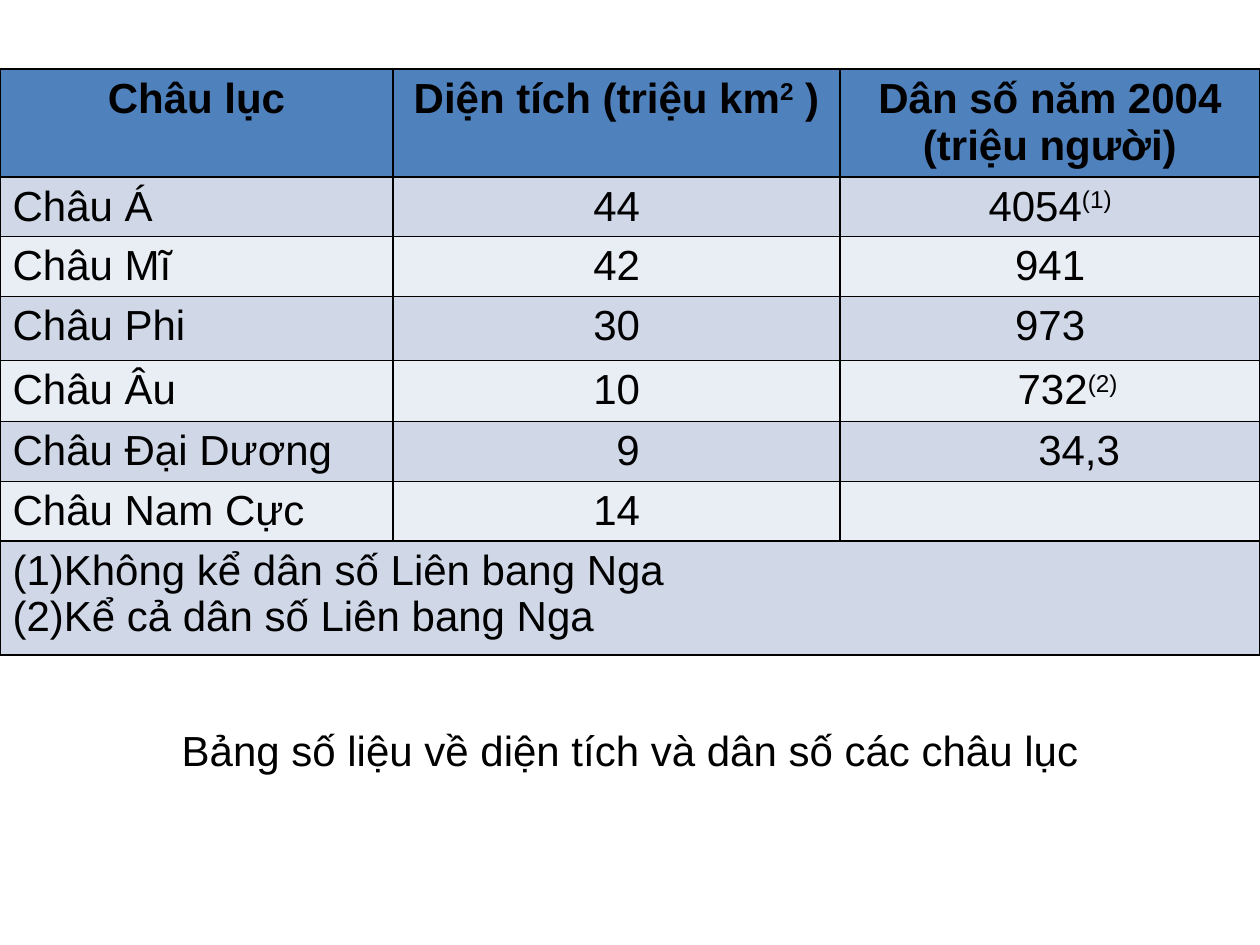
from lxml import etree
from pptx import Presentation
from pptx.dml.color import RGBColor
from pptx.enum.text import MSO_AUTO_SIZE, PP_ALIGN
from pptx.oxml.ns import qn
from pptx.util import Emu, Pt

CENTER, JUSTIFY = PP_ALIGN.CENTER, PP_ALIGN.JUSTIFY
GROW = MSO_AUTO_SIZE.SHAPE_TO_FIT_TEXT

# Content: a cell is a list of (text, is superscript) runs
HEADERS = [
    [("Châu lục", False)],
    [("Diện tích (triệu km", False), ("2", True), (" )", False)],
    [("Dân số năm 2004 (triệu người)", False)],
]
CONTINENTS = [
    ("Châu Á", "44", "4054", "(1)"),
    ("Châu Mĩ", "42", "941", ""),
    ("Châu Phi", "30", "973", ""),
    ("Châu Âu", "10", "732", "(2)"),
    ("Châu Đại Dương", "9", "34,3", ""),
    ("Châu Nam Cực", "14", "", ""),
]
NOTES = ["Không kể dân số Liên bang Nga", "Kể cả dân số Liên bang Nga"]
CAPTION = "Bảng số liệu về diện tích và dân số các châu lục"

# Layout in px, 126 to the inch
SLIDE_W, SLIDE_H = 1260, 945
TABLE_TOP = 69
COLUMN_WIDTHS = [393, 447, 420]
ROW_HEIGHTS = [108, 59, 60, 64, 61, 60, 59, 114]
CAPTION_BOX = (0, 718, SLIDE_W, 63)
CELL_MARGIN = 13
NUMBER_SHIFTS = {"732": 35, "9": 23, "34,3": 58}
NOTE_INDENT = 48

HEADER_FILL = "4F81BD"
BAND_FILLS = ["D0D8E8", "E9EDF4"]
BLACK = "000000"
FONT = {"name": "Arial", "size": Pt(24)}


def px(length):
    return Emu(round(length * 914400 / 126))


def colour(value):
    return RGBColor.from_string(value)


def write(paragraph, runs, align, bold=False):
    paragraph.alignment = align
    for text, superscript in runs:
        run = paragraph.add_run()
        run.text = text
        for key, value in {**FONT, "bold": bold}.items():
            setattr(run.font, key, value)
        run.font.color.rgb = colour(BLACK)
        if superscript:
            run.font._element.set("baseline", "30000")


def style_cell(cell, fill):
    properties = cell._tc.get_or_add_tcPr()
    for side in ("a:lnL", "a:lnR", "a:lnT", "a:lnB"):
        line = etree.SubElement(properties, qn(side), w=str(Pt(1)))
        solid = etree.SubElement(line, qn("a:solidFill"))
        etree.SubElement(solid, qn("a:srgbClr"), val=BLACK)
    cell.fill.solid()
    cell.fill.fore_color.rgb = colour(fill)


def number_note(paragraph):
    properties = paragraph._p.get_or_add_pPr()
    properties.set("marL", str(px(NOTE_INDENT)))
    properties.set("indent", str(-px(NOTE_INDENT)))
    etree.SubElement(properties, qn("a:buFont"), typeface=FONT["name"])
    etree.SubElement(properties, qn("a:buAutoNum"), type="arabicParenBoth")


prs = Presentation()
prs.slide_width, prs.slide_height = px(SLIDE_W), px(SLIDE_H)
slide = prs.slides.add_slide(prs.slide_layouts[6])

# Table grid, fills and borders
table = slide.shapes.add_table(
    len(ROW_HEIGHTS), len(COLUMN_WIDTHS), 0, px(TABLE_TOP),
    px(sum(COLUMN_WIDTHS)), px(sum(ROW_HEIGHTS))).table
table.horz_banding = False
for column, width in zip(table.columns, COLUMN_WIDTHS):
    column.width = px(width)
for index, (row, height) in enumerate(zip(table.rows, ROW_HEIGHTS)):
    row.height = px(height)
    for cell in row.cells:
        style_cell(cell, BAND_FILLS[(index - 1) % 2] if index else HEADER_FILL)

# Header row
for index, runs in enumerate(HEADERS):
    write(table.cell(0, index).text_frame.paragraphs[0], runs, CENTER, bold=True)

# One row per continent
for index, (name, area, population, mark) in enumerate(CONTINENTS, start=1):
    name_cell, area_cell, population_cell = table.rows[index].cells
    write(name_cell.text_frame.paragraphs[0], [(name, False)], JUSTIFY)
    for cell, number, sign in ((area_cell, area, ""), (population_cell, population, mark)):
        runs = [(text, raised) for text, raised in ((number, False), (sign, True)) if text]
        write(cell.text_frame.paragraphs[0], runs, CENTER)
        cell.margin_left = px(CELL_MARGIN + NUMBER_SHIFTS.get(number, 0))

# Numbered notes across the last row
last = len(ROW_HEIGHTS) - 1
notes_cell = table.cell(last, 0)
notes_cell.merge(table.cell(last, len(COLUMN_WIDTHS) - 1))
notes_frame = notes_cell.text_frame
for index, note in enumerate(NOTES):
    paragraph = notes_frame.add_paragraph() if index else notes_frame.paragraphs[0]
    write(paragraph, [(note, False)], JUSTIFY)
    number_note(paragraph)

# Caption below the table
caption = slide.shapes.add_textbox(*map(px, CAPTION_BOX)).text_frame
caption.word_wrap = True
caption.auto_size = GROW
write(caption.paragraphs[0], [(CAPTION, False)], CENTER)

prs.save("out.pptx")
